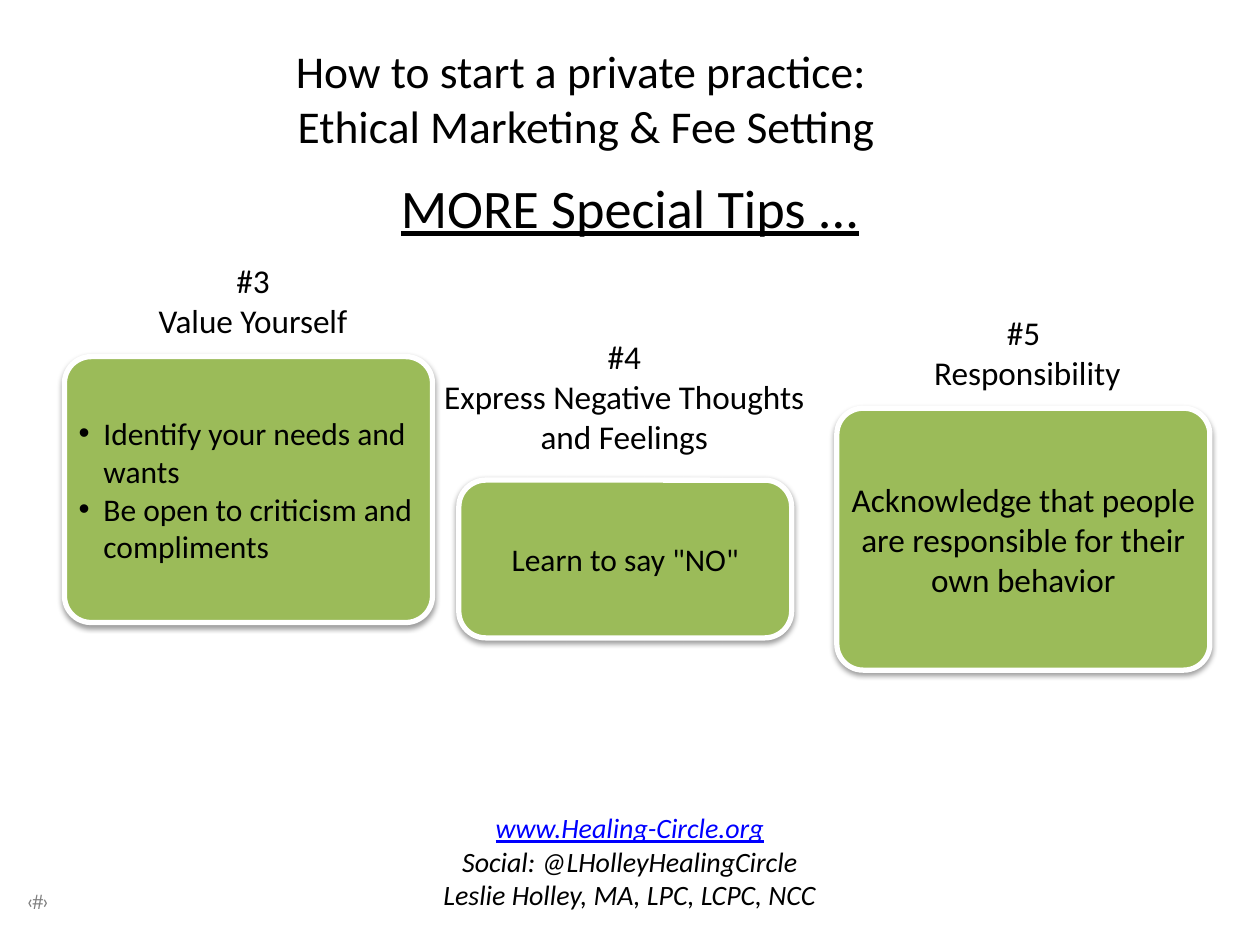
from lxml.etree import SubElement
from pptx import Presentation
from pptx.dml.color import RGBColor
from pptx.enum.shapes import MSO_SHAPE
from pptx.enum.text import MSO_ANCHOR, MSO_AUTO_SIZE, PP_ALIGN
from pptx.oxml.ns import qn
from pptx.util import Cm, Pt

BLACK, WHITE, GREEN, BLUE, GRAY = "000000", "FFFFFF", "9BBB59", "0000FF", "7F7F7F"
BODY = {"name": "Calibri", "size": Pt(19)}
SMALL = {**BODY, "size": Pt(18)}
HEADING = {**BODY, "size": Pt(26)}
TITLE = {**BODY, "size": Pt(31), "underline": True}
CONTACT = {**BODY, "size": Pt(16), "italic": True}
NUMBER = {"name": "TeX Gyre Adventor", "size": Pt(11)}


def rgb(value):
    return RGBColor.from_string(value)


def set_attrs(obj, values):
    for name, value in values.items():
        setattr(obj, name, value)


def set_frame(tf, inset, anchor=MSO_ANCHOR.TOP, wrap=True):
    margins = {f"margin_{side}": Cm(inset) for side in ("left", "top", "right", "bottom")}
    set_attrs(tf, {**margins, "vertical_anchor": anchor, "word_wrap": wrap,
                   "auto_size": MSO_AUTO_SIZE.NONE})


def add_bullet(p):
    pPr = p._p.get_or_add_pPr()
    pPr.set("marL", str(Cm(0.5)))
    pPr.set("indent", str(-Cm(0.5)))
    SubElement(pPr, qn("a:buFont"), typeface="Arial")
    SubElement(pPr, qn("a:buChar"), char="•")


def write(tf, lines, font, color=BLACK, align=PP_ALIGN.CENTER, bullets=False):
    for i, line in enumerate(lines):
        p = tf.add_paragraph() if i else tf.paragraphs[0]
        p.alignment = align
        if bullets:
            add_bullet(p)
        r = p.add_run()
        r.text = line
        set_attrs(r.font, font)
        r.font.color.rgb = rgb(color)


def add_label(s, box, lines, font, color=BLACK, align=PP_ALIGN.CENTER, inset=0.13, wrap=True):
    tb = s.shapes.add_textbox(*map(Cm, box))
    set_frame(tb.text_frame, inset, wrap=wrap)
    write(tb.text_frame, lines, font, color, align)
    return tb.text_frame


def add_shadow(sp):
    sp.shadow.inherit = False
    effects = sp._element.spPr.find(qn("a:effectLst"))
    shadow = SubElement(effects, qn("a:outerShdw"), blurRad=str(Pt(3)), dist=str(Pt(1.6)),
                        dir="5400000", rotWithShape="0")
    color = SubElement(shadow, qn("a:srgbClr"), val=BLACK)
    SubElement(color, qn("a:alpha"), val="38000")


def add_card(s, box, radius, lines, font, bullets=False):
    sp = s.shapes.add_shape(MSO_SHAPE.ROUNDED_RECTANGLE, *map(Cm, box))
    sp.adjustments[0] = radius
    sp.fill.solid()
    sp.fill.fore_color.rgb = rgb(GREEN)
    sp.line.color.rgb = rgb(WHITE)
    sp.line.width = Pt(3)
    add_shadow(sp)
    set_frame(sp.text_frame, 0.13, MSO_ANCHOR.MIDDLE)
    align = PP_ALIGN.LEFT if bullets else PP_ALIGN.CENTER
    write(sp.text_frame, lines, font, align=align, bullets=bullets)


def add_title(s, box, text):
    title = s.shapes.title
    set_attrs(title, dict(zip(("left", "top", "width", "height"), map(Cm, box))))
    set_frame(title.text_frame, 0)
    write(title.text_frame, [text], TITLE)


def main():
    prs = Presentation()
    prs.slide_width, prs.slide_height = Cm(25.4), Cm(19.05)
    s = prs.slides.add_slide(prs.slide_layouts[5])

    add_label(s, (0.48, 17.86, 4.6, 0.64), ["‹#›"], NUMBER, GRAY, PP_ALIGN.LEFT, 0.08)
    contact = add_label(s, (7.87, 16.21, 9.65, 3.35),
                        ["www.Healing-Circle.org", "Social: @LHolleyHealingCircle",
                         "Leslie Holley, MA, LPC, LCPC, NCC"], CONTACT, wrap=False)
    link = contact.paragraphs[0].runs[0].font
    link.underline = True
    link.color.rgb = rgb(BLUE)
    add_label(s, (-0.13, 0.74, 23.9, 2.79),
              ["How to start a private practice: ", "Ethical Marketing & Fee Setting"], HEADING)
    add_title(s, (1.27, 3.51, 22.86, 3.18), "MORE Special Tips ...")

    add_card(s, (1.3, 7.19, 7.42, 5.36), 0.1,
             ["Identify your needs and wants", "Be open to criticism and compliments"],
             SMALL, bullets=True)
    add_card(s, (9.25, 9.68, 6.71, 3.18), 0.17, ['Learn to say "NO"'], SMALL)
    add_card(s, (16.87, 8.23, 7.52, 5.28), 0.1,
             ["Acknowledge that people are responsible for their own behavior"], BODY)

    add_label(s, (2.24, 5.11, 5.72, 2.08), ["#3", "Value Yourself"], BODY)
    add_label(s, (8.79, 6.65, 7.59, 3), ["#4", "Express Negative Thoughts and Feelings"], BODY)
    add_label(s, (16.99, 6.17, 7.44, 3), ["#5 ", "Responsibility"], BODY)

    prs.save("out.pptx")


if __name__ == "__main__":
    main()
